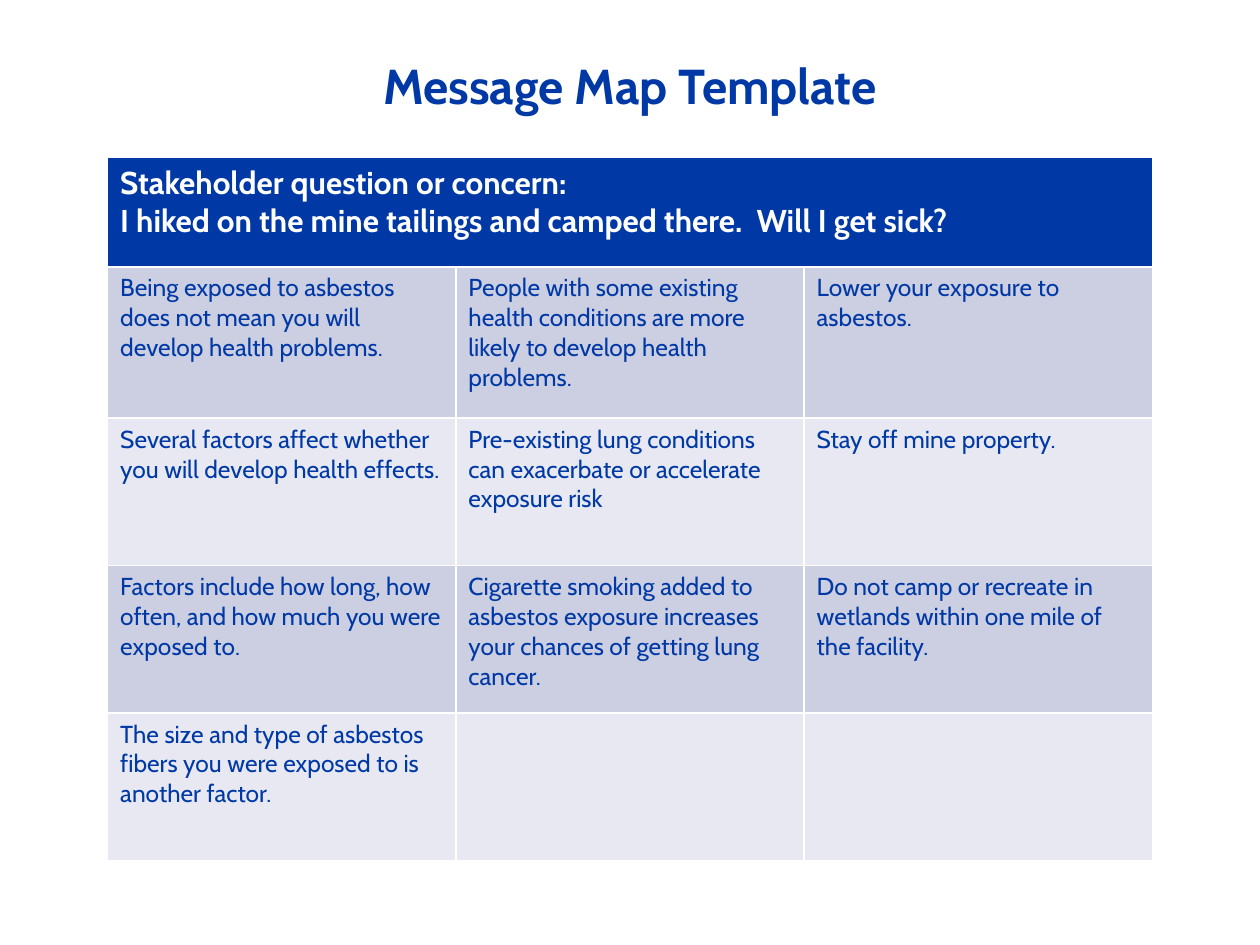
from pptx import Presentation
from pptx.dml.color import RGBColor
from pptx.enum.text import MSO_ANCHOR, MSO_AUTO_SIZE, PP_ALIGN
from pptx.util import Pt

# Content
TITLE = "Message Map Template"
HEAD = [
    "Stakeholder question or concern:",
    "I hiked on the mine tailings and camped there.  Will I get sick?",
]
ROWS = [
    ("Being exposed to asbestos does not mean you will develop health problems.",
     "People with some existing health conditions are more likely to develop health problems.",
     "Lower your exposure to asbestos."),
    ("Several factors affect whether you will develop health effects.",
     "Pre-existing lung conditions can exacerbate or accelerate exposure risk",
     "Stay off mine property."),
    ("Factors include how long, how often, and how much you were exposed to.",
     "Cigarette smoking added to asbestos exposure increases your chances of getting lung cancer.",
     "Do not camp or recreate in wetlands within one mile of the facility."),
    ("The size and type of asbestos fibers you were exposed to is another factor.",
     "", ""),
]

# Style and sizes in points
FONT = "Cabin"
BLUE = RGBColor(0x00, 0x39, 0xA6)
WHITE = RGBColor(0xFF, 0xFF, 0xFF)
BANDS = [RGBColor(0xCC, 0xCE, 0xE1), RGBColor(0xE7, 0xE8, 0xF1)]
LEFT, TOP, WIDTH = 61.5, 90, 597
HIGHS = [62.5, 86.5, 84.25, 84.25, 84.25]
COLS = 3


def write(frame, lines, size, color, bold):
    for i, line in enumerate(lines):
        para = frame.paragraphs[0] if i == 0 else frame.add_paragraph()
        run = para.add_run()
        run.text = line
        font = run.font
        font.name, font.size, font.bold = FONT, Pt(size), bold
        font.color.rgb = color


def paint(cell, color):
    cell.fill.solid()
    cell.fill.fore_color.rgb = color


deck = Presentation()
deck.slide_width, deck.slide_height = Pt(720), Pt(540)
slide = deck.slides.add_slide(deck.slide_layouts[5])

# Title
title = slide.shapes.title
title.left, title.top = Pt(36), Pt(31)
title.width, title.height = Pt(648), Pt(38)
frame = title.text_frame
frame.auto_size = MSO_AUTO_SIZE.NONE
frame.vertical_anchor = MSO_ANCHOR.BOTTOM
write(frame, [TITLE], 28, BLUE, True)
frame.paragraphs[0].alignment = PP_ALIGN.CENTER
frame.paragraphs[0].line_spacing = Pt(30)

# Table grid
table = slide.shapes.add_table(len(HIGHS), COLS, Pt(LEFT), Pt(TOP),
                               Pt(WIDTH), Pt(sum(HIGHS))).table
for col in table.columns:
    col.width = Pt(WIDTH / COLS)
for row, high in zip(table.rows, HIGHS):
    row.height = Pt(high)

# Question across the top
head = table.cell(0, 0)
head.merge(table.cell(0, COLS - 1))
paint(head, BLUE)
write(head.text_frame, HEAD, 18, WHITE, True)

# Messages in banded rows
for r, texts in enumerate(ROWS):
    for c, text in enumerate(texts):
        cell = table.cell(r + 1, c)
        paint(cell, BANDS[r % 2])
        if text:
            write(cell.text_frame, [text], 14, BLUE, False)

deck.save("out.pptx")
